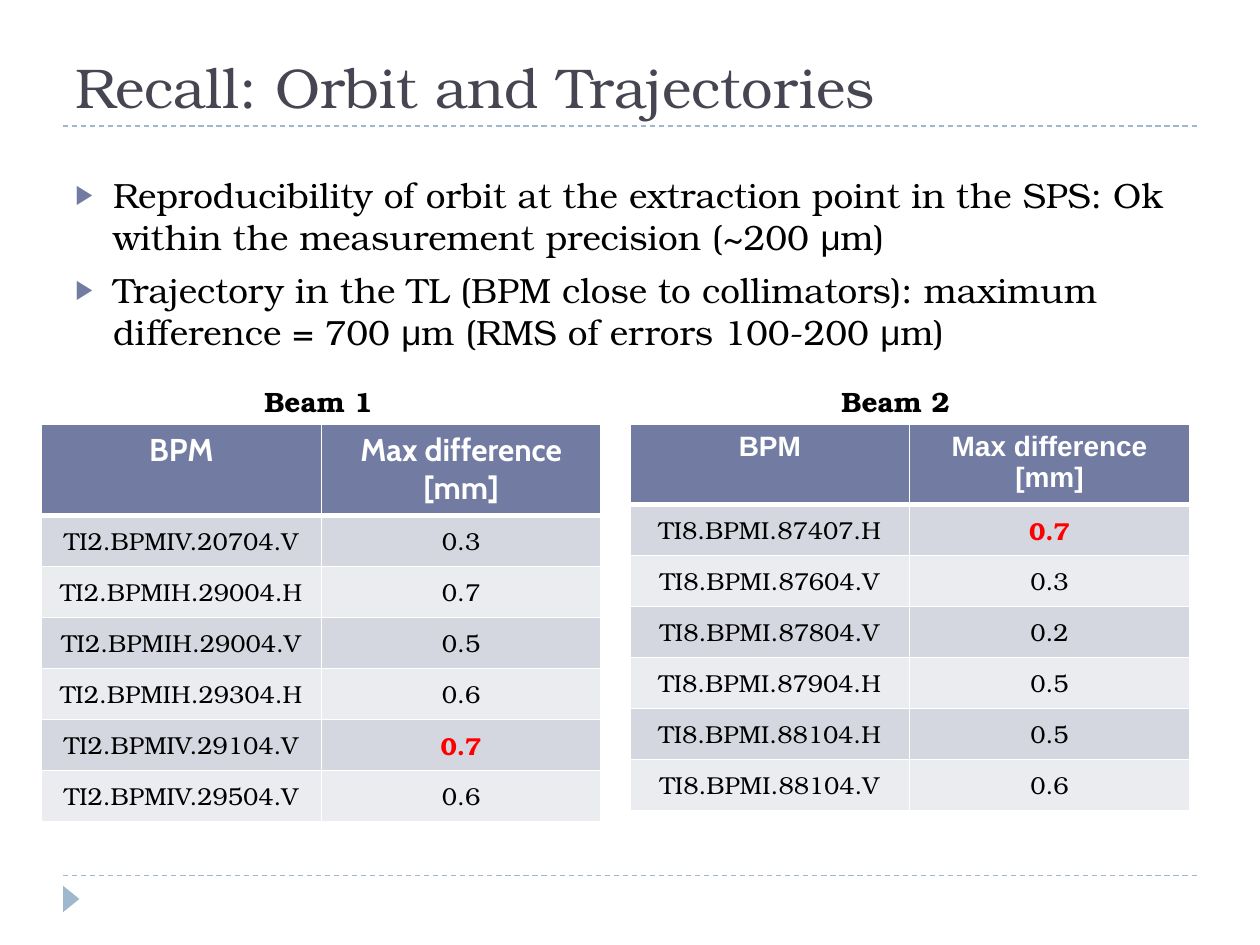
from lxml import etree
from pptx import Presentation
from pptx.dml.color import RGBColor
from pptx.enum.dml import MSO_LINE
from pptx.enum.shapes import MSO_CONNECTOR, MSO_SHAPE
from pptx.enum.text import MSO_ANCHOR, PP_ALIGN
from pptx.oxml.ns import qn
from pptx.util import Inches, Pt

STRAIGHT, TRIANGLE, DASH = MSO_CONNECTOR.STRAIGHT, MSO_SHAPE.ISOSCELES_TRIANGLE, MSO_LINE.DASH
TOP, MIDDLE, BOTTOM = MSO_ANCHOR.TOP, MSO_ANCHOR.MIDDLE, MSO_ANCHOR.BOTTOM
CENTER = PP_ALIGN.CENTER

BLACK = RGBColor(0x00, 0x00, 0x00)
WHITE = RGBColor(0xFF, 0xFF, 0xFF)
RED = RGBColor(0xFF, 0x00, 0x00)
TITLE_GREY = RGBColor(0x46, 0x46, 0x53)
RULE_BLUE = RGBColor(0x9F, 0xB8, 0xCD)
HEADER_BLUE = RGBColor(0x72, 0x7C, 0xA3)
BANDS = (RGBColor(0xD5, 0xD7, 0xE0), RGBColor(0xEB, 0xEC, 0xF0))
SERIF, SANS, ROUND = "TeX Gyre Bonum", "Arial", "Cabin"

# Content
TITLE = "Recall: Orbit and Trajectories"
MU = "μ"
BULLETS = [
    ["Reproducibility of orbit at the extraction point in the SPS: Ok within "
     "the measurement precision (~200 ", MU, "m)"],
    ["Trajectory in the TL (BPM close to collimators): maximum difference = 700 ",
     MU, "m (RMS of errors 100-200 ", MU, "m)"],
]
HEADERS = ("BPM", "Max difference [mm]")
BEAMS = [
    {"name": "Beam 1", "left": 0.33, "label_left": 2.0, "header_height": 0.72,
     "header_font": ROUND, "header_size": 18, "worst": "TI2.BPMIV.29104.V",
     "rows": [("TI2.BPMIV.20704.V", "0.3"), ("TI2.BPMIH.29004.H", "0.7"),
              ("TI2.BPMIH.29004.V", "0.5"), ("TI2.BPMIH.29304.H", "0.6"),
              ("TI2.BPMIV.29104.V", "0.7"), ("TI2.BPMIV.29504.V", "0.6")]},
    {"name": "Beam 2", "left": 5.0, "label_left": 6.58, "header_height": 0.58,
     "header_font": SANS, "header_size": 16, "worst": "TI8.BPMI.87407.H",
     "rows": [("TI8.BPMI.87407.H", "0.7"), ("TI8.BPMI.87604.V", "0.3"),
              ("TI8.BPMI.87804.V", "0.2"), ("TI8.BPMI.87904.H", "0.5"),
              ("TI8.BPMI.88104.H", "0.5"), ("TI8.BPMI.88104.V", "0.6")]},
]

# Grid, in inches
WIDTH, HEIGHT, MARGIN = 10, 7.5, 0.5
CONTENT_WIDTH = WIDTH - 2 * MARGIN
TITLE_RULE, FOOTER_RULE = 1.0, 6.95
TABLE_TOP, COLUMN_WIDTH, ROW_HEIGHT = 3.37, 2.22, 0.405
LABEL_TOP, LABEL_WIDTH, LABEL_HEIGHT = 3.0, 1.25, 0.37


def add_run(paragraph, text, size, color, font=SERIF, bold=False):
    run = paragraph.add_run()
    run.text = text
    run.font.name, run.font.size, run.font.bold = font, Pt(size), bold
    run.font.color.rgb = color


def add_text_frame(slide, left, top, width, height, anchor=TOP):
    frame = slide.shapes.add_textbox(*map(Inches, (left, top, width, height))).text_frame
    frame.word_wrap, frame.vertical_anchor = True, anchor
    return frame


def add_rule(slide, y):
    rule = slide.shapes.add_connector(
        STRAIGHT, *map(Inches, (MARGIN, y, WIDTH - MARGIN, y)))
    rule.line.color.rgb, rule.line.width, rule.line.dash_style = RULE_BLUE, Pt(0.75), DASH
    etree.SubElement(rule._element.spPr, qn("a:effectLst"))


def set_bullet(paragraph):
    properties = paragraph._p.get_or_add_pPr()
    properties.set("marL", str(Inches(0.3)))
    properties.set("indent", str(Inches(-0.3)))
    color = etree.SubElement(properties, qn("a:buClr"))
    etree.SubElement(color, qn("a:srgbClr"), val=str(HEADER_BLUE))
    etree.SubElement(properties, qn("a:buSzPct"), val="76000")
    etree.SubElement(properties, qn("a:buFont"), typeface=SANS)
    etree.SubElement(properties, qn("a:buChar"), char="▶")


def set_borders(cell, top, bottom):
    properties = cell._tc.get_or_add_tcPr()
    sides = (("a:lnL", 1), ("a:lnR", 1), ("a:lnT", top), ("a:lnB", bottom))
    for position, (side, points) in enumerate(sides):
        border = etree.Element(qn(side), w=str(Pt(points)))
        fill = etree.SubElement(border, qn("a:solidFill"))
        etree.SubElement(fill, qn("a:srgbClr"), val=str(WHITE))
        properties.insert(position, border)


def fill_cell(cell, text, fill, anchor, top, bottom, **style):
    cell.fill.solid()
    cell.fill.fore_color.rgb = fill
    cell.vertical_anchor = anchor
    set_borders(cell, top, bottom)
    paragraph = cell.text_frame.paragraphs[0]
    paragraph.alignment = CENTER
    add_run(paragraph, text, **style)


def add_beam(slide, beam):
    rows = beam["rows"]
    heights = [beam["header_height"]] + [ROW_HEIGHT] * len(rows)
    table = slide.shapes.add_table(
        len(heights), len(HEADERS), Inches(beam["left"]), Inches(TABLE_TOP),
        Inches(COLUMN_WIDTH * len(HEADERS)), Inches(sum(heights))).table
    for column in table.columns:
        column.width = Inches(COLUMN_WIDTH)
    for row, height in zip(table.rows, heights):
        row.height = Inches(height)

    for column, header in enumerate(HEADERS):
        fill_cell(table.cell(0, column), header, HEADER_BLUE, TOP, 1, 3,
                  size=beam["header_size"], color=WHITE,
                  font=beam["header_font"], bold=True)
    for index, (monitor, difference) in enumerate(rows):
        for column, text in enumerate((monitor, difference)):
            cell = table.cell(index + 1, column)
            worst = column == 1 and monitor == beam["worst"]
            fill_cell(cell, text, BANDS[index % 2], MIDDLE, 1 if index else 3, 1,
                      size=14, color=RED if worst else BLACK, bold=worst)
            if column == 0:
                cell.margin_left = cell.margin_right = 0
                cell.margin_top = cell.margin_bottom = 0

    label = add_text_frame(slide, beam["label_left"], LABEL_TOP, LABEL_WIDTH, LABEL_HEIGHT)
    add_run(label.paragraphs[0], beam["name"], 16, BLACK, bold=True)


def main():
    deck = Presentation()
    deck.slide_width, deck.slide_height = Inches(WIDTH), Inches(HEIGHT)
    slide = deck.slides.add_slide(deck.slide_layouts[6])

    # Rules and footer marker
    add_rule(slide, FOOTER_RULE)
    add_rule(slide, TITLE_RULE)
    marker = slide.shapes.add_shape(TRIANGLE, *map(Inches, (0.46, 7.07, 0.21, 0.13)))
    marker.rotation = 90
    marker.shadow.inherit = False
    marker.fill.solid()
    marker.fill.fore_color.rgb = RULE_BLUE
    marker.line.fill.background()

    # Title and bullets
    title = add_text_frame(slide, MARGIN, -0.08, CONTENT_WIDTH, 1.08, BOTTOM)
    add_run(title.paragraphs[0], TITLE, 32, TITLE_GREY)
    body = add_text_frame(slide, MARGIN, 1.33, CONTENT_WIDTH, 1.6)
    for index, pieces in enumerate(BULLETS):
        paragraph = body.add_paragraph() if index else body.paragraphs[0]
        paragraph.space_before = Pt(6)
        set_bullet(paragraph)
        for piece in pieces:
            add_run(paragraph, piece, 20, BLACK, SANS if piece == MU else SERIF)

    # Beam tables
    for beam in BEAMS:
        add_beam(slide, beam)

    deck.save("out.pptx")


if __name__ == "__main__":
    main()
